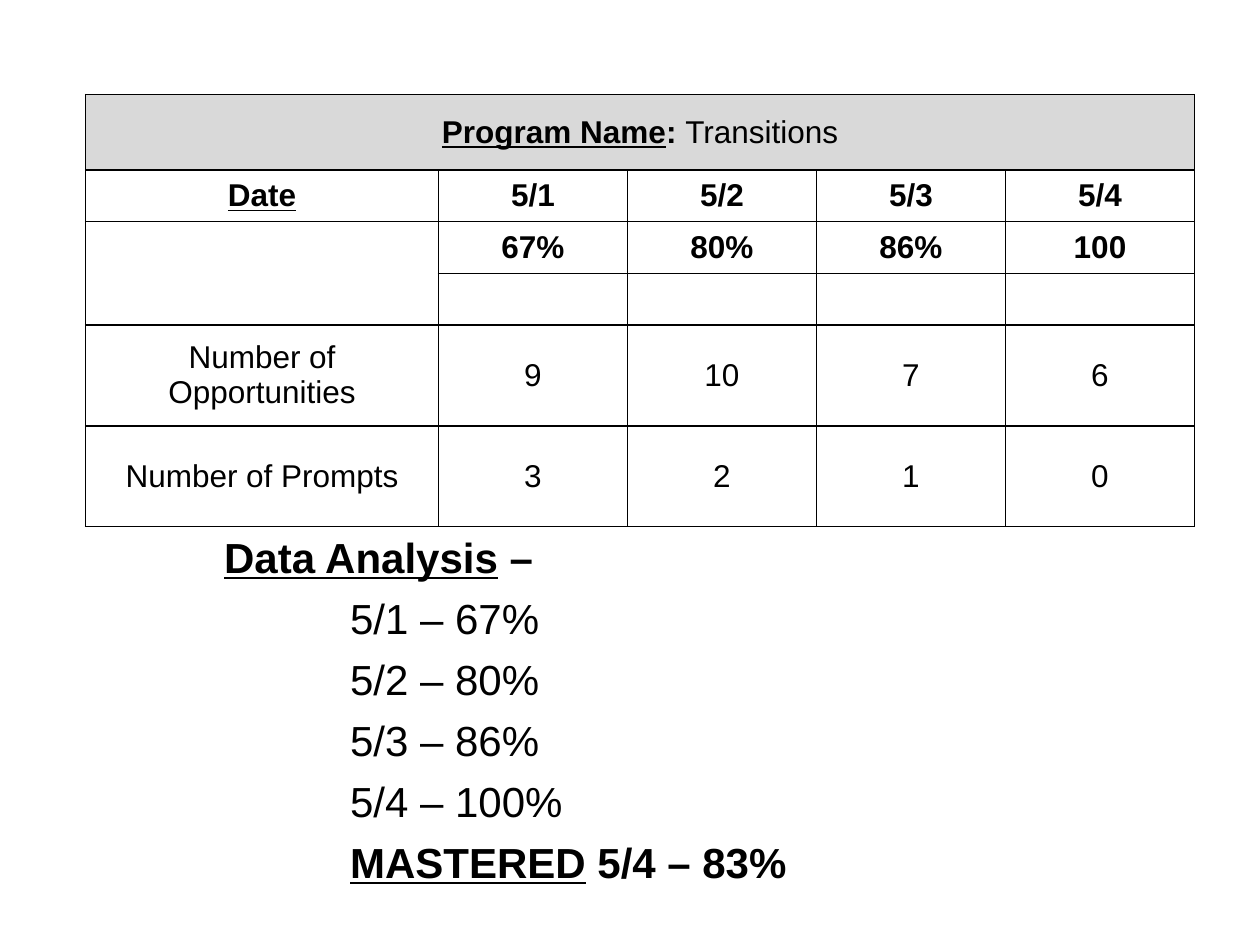
from typing import NamedTuple

from lxml import etree
from pptx import Presentation
from pptx import util as u
from pptx.dml import color
from pptx.enum import text
from pptx.oxml import ns


class Phrase(NamedTuple):
    wording: str
    bold: bool = False
    underline: bool = False


class AnalysisLine(NamedTuple):
    phrases: list[Phrase]
    indent: float = 2


BLACK, WHITE, GREY = "000000", "FFFFFF", "D9D9D9"
COLUMN_WIDTHS = [2.8] + [1.5] * 4
ROW_HEIGHTS = [0.6] + [0.41] * 3 + [0.8] * 2
DATES = ["5/1", "5/2", "5/3", "5/4"]
SCORES = ["67%", "80%", "86%", "100%"]

PROGRAM_ROWS = [
    [[Phrase("Program Name", True, True), Phrase(": ", True), Phrase("Transitions")]],
    [[Phrase("Date", True, True)]] + [[Phrase(date, True)] for date in DATES],
    [[]] + [[Phrase(score, True)] for score in SCORES[:3] + ["100"]],
    [],
    [[Phrase(entry)] for entry in ["Number of Opportunities", "9", "10", "7", "6"]],
    [[Phrase(entry)] for entry in ["Number of Prompts", "3", "2", "1", "0"]],
]

ANALYSIS = [
    AnalysisLine([Phrase("Data Analysis", True, True), Phrase(" –", True)], 1),
    *[AnalysisLine([Phrase(f"{date} – {score}")]) for date, score in zip(DATES, SCORES)],
    AnalysisLine([Phrase("MASTERED", True, True), Phrase(" 5/4 – 83%", True)]),
]


def rgb(value: str) -> color.RGBColor:
    return color.RGBColor.from_string(value)


def write_phrases(paragraph, phrases: list[Phrase], size: float) -> None:
    for phrase in phrases:
        run = paragraph.add_run()
        run.text = phrase.wording
        style = {"name": "Arial", "size": u.Pt(size),
                 "bold": phrase.bold, "underline": phrase.underline}
        for attribute, value in style.items():
            setattr(run.font, attribute, value)
        run.font.color.rgb = rgb(BLACK)


def style_cell(cell, fill: str) -> None:
    properties = cell._tc.get_or_add_tcPr()
    for side in ("lnL", "lnR", "lnT", "lnB"):
        border = etree.SubElement(properties, ns.qn(f"a:{side}"), w=str(u.Pt(1)))
        solid = etree.SubElement(border, ns.qn("a:solidFill"))
        etree.SubElement(solid, ns.qn("a:srgbClr"), val=BLACK)
    cell.fill.solid()
    cell.fill.fore_color.rgb = rgb(fill)
    cell.vertical_anchor = text.MSO_ANCHOR.MIDDLE


def draw_program_table(slide) -> None:
    table = slide.shapes.add_table(
        len(ROW_HEIGHTS), len(COLUMN_WIDTHS), u.Inches(0.68), u.Inches(0.75),
        u.Inches(sum(COLUMN_WIDTHS)), u.Inches(sum(ROW_HEIGHTS))).table
    for column, width in zip(table.columns, COLUMN_WIDTHS):
        column.width = u.Inches(width)
    for row_number, (row, height) in enumerate(zip(table.rows, ROW_HEIGHTS)):
        row.height = u.Inches(height)
        for cell in row.cells:
            style_cell(cell, WHITE if row_number else GREY)
        for cell, phrases in zip(row.cells, PROGRAM_ROWS[row_number]):
            paragraph = cell.text_frame.paragraphs[0]
            paragraph.alignment = text.PP_ALIGN.CENTER
            write_phrases(paragraph, phrases, 18)
    table.cell(0, 0).merge(table.cell(0, 4))
    table.cell(2, 0).merge(table.cell(3, 0))


def draw_analysis(slide) -> None:
    frame = slide.shapes.add_textbox(
        u.Inches(0.68), u.Inches(4.17), u.Inches(8.92), u.Inches(2.9)).text_frame
    frame.word_wrap = True
    for number, line in enumerate(ANALYSIS):
        paragraph = frame.add_paragraph() if number else frame.paragraphs[0]
        paragraph.space_before = u.Pt(6 if number else 0)
        paragraph._p.get_or_add_pPr().set("marL", str(u.Inches(line.indent)))
        write_phrases(paragraph, line.phrases, 24)


def main() -> None:
    presentation = Presentation()
    presentation.slide_width = u.Inches(10)
    presentation.slide_height = u.Inches(7.5)
    slide = presentation.slides.add_slide(presentation.slide_layouts[6])
    draw_analysis(slide)
    draw_program_table(slide)
    presentation.save("out.pptx")


if __name__ == "__main__":
    main()
